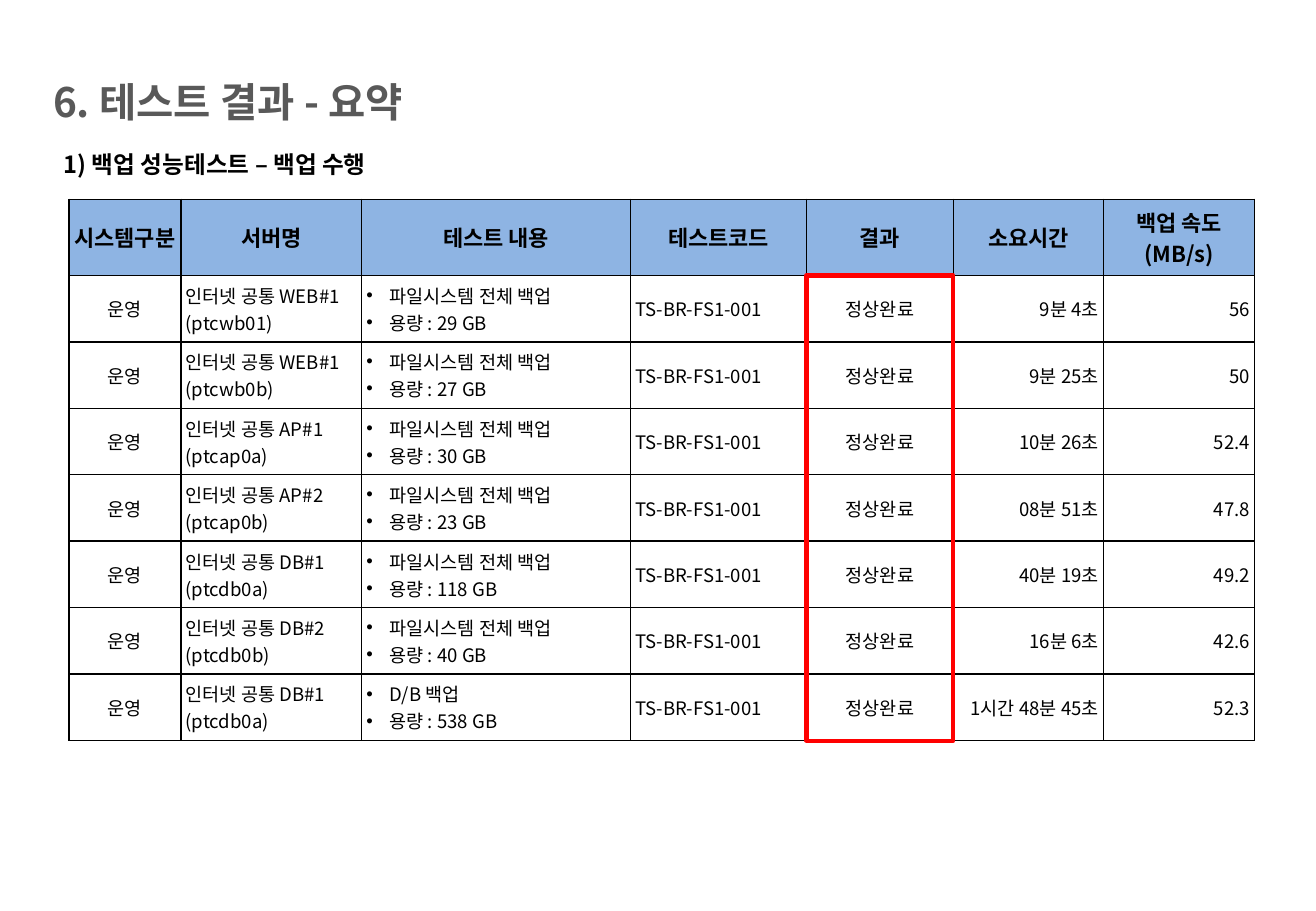
"""Build the backup performance test summary slide."""
from dataclasses import dataclass

from lxml.etree import SubElement
from pptx import Presentation
from pptx.dml.color import RGBColor
from pptx.enum.shapes import MSO_SHAPE
from pptx.enum.text import MSO_ANCHOR, PP_ALIGN
from pptx.oxml.ns import qn
from pptx.util import Cm, Pt

FONT = "Noto Sans CJK KR"
COLORS = {
    "title": "595959",
    "text": "000000",
    "header": "8EB4E3",
    "body": "FFFFFF",
    "border": "000000",
    "highlight": "FF0000",
}
TABLE_LEFT, TABLE_TOP = 1.44, 4.17
HEADER_HEIGHT, ROW_HEIGHT = 1.59, 1.39
CONTENT_COLUMN, RESULT_COLUMN = 2, 4


@dataclass
class Column:
    heading: str
    width: float
    align: PP_ALIGN


@dataclass
class BackupTest:
    server: str
    host: str
    volume: int
    duration: str
    speed: str
    work: str = "파일시스템 전체 백업"

    def values(self) -> list[str]:
        return [
            "운영",
            f"인터넷 공통 {self.server}\n({self.host})",
            f"{self.work}\n용량 : {self.volume} GB",
            "TS-BR-FS1-001",
            "정상완료",
            self.duration,
            self.speed,
        ]


@dataclass
class Heading:
    text: str
    left: float
    top: float
    width: float
    height: float
    size: float
    color: str
    spacing: float


COLUMNS = [
    Column("시스템구분", 2.34, PP_ALIGN.CENTER),
    Column("서버명", 3.78, PP_ALIGN.LEFT),
    Column("테스트 내용", 5.62, PP_ALIGN.LEFT),
    Column("테스트코드", 3.68, PP_ALIGN.LEFT),
    Column("결과", 3.07, PP_ALIGN.CENTER),
    Column("소요시간", 3.14, PP_ALIGN.RIGHT),
    Column("백업 속도\n(MB/s)", 3.16, PP_ALIGN.RIGHT),
]
TESTS = [
    BackupTest("WEB#1", "ptcwb01", 29, "9분 4초", "56"),
    BackupTest("WEB#1", "ptcwb0b", 27, "9분 25초", "50"),
    BackupTest("AP#1", "ptcap0a", 30, "10분 26초", "52.4"),
    BackupTest("AP#2", "ptcap0b", 23, "08분 51초", "47.8"),
    BackupTest("DB#1", "ptcdb0a", 118, "40분 19초", "49.2"),
    BackupTest("DB#2", "ptcdb0b", 40, "16분 6초", "42.6"),
    BackupTest("DB#1", "ptcdb0a", 538, "1시간 48분 45초", "52.3", "D/B 백업"),
]
HEADINGS = [
    Heading("6. 테스트 결과 - 요약", 0.86, 1.5, 20.47, 1.24, 24, "title", 1),
    Heading("1) 백업 성능테스트 – 백업 수행", 1.08, 2.77, 25, 1.04, 14, "text", 1.5),
]


def color(name: str) -> RGBColor:
    return RGBColor.from_string(COLORS[name])


def format_text(frame, size: float, bold: bool, color_name: str, align: PP_ALIGN) -> None:
    for paragraph in frame.paragraphs:
        paragraph.alignment = align
        for span in paragraph.runs:
            span.font.name = FONT
            span.font.size = Pt(size)
            span.font.bold = bold
            span.font.color.rgb = color(color_name)
            SubElement(span.font._element, qn("a:ea"), typeface=FONT)


def add_bullets(frame) -> None:
    for paragraph in frame.paragraphs:
        properties = paragraph._p.get_or_add_pPr()
        properties.set("marL", str(Cm(0.48)))
        properties.set("indent", str(-Cm(0.48)))
        SubElement(properties, qn("a:buFont"), typeface="Arial")
        SubElement(properties, qn("a:buChar"), char="•")


def add_borders(cell) -> None:
    properties = cell._tc.get_or_add_tcPr()
    for index, side in enumerate(("lnL", "lnR", "lnT", "lnB")):
        line = properties.makeelement(qn(f"a:{side}"), {"w": str(Pt(1))})
        fill = SubElement(line, qn("a:solidFill"))
        SubElement(fill, qn("a:srgbClr"), val=COLORS["border"])
        properties.insert(index, line)


def add_heading(page, heading: Heading) -> None:
    box = page.shapes.add_textbox(
        Cm(heading.left), Cm(heading.top), Cm(heading.width), Cm(heading.height)
    )
    frame = box.text_frame
    frame.word_wrap = True
    frame.vertical_anchor = MSO_ANCHOR.MIDDLE
    frame.margin_top = frame.margin_bottom = 0
    frame.text = heading.text
    frame.paragraphs[0].line_spacing = heading.spacing
    format_text(frame, heading.size, True, heading.color, PP_ALIGN.LEFT)


def fill_cell(cell, text: str, column: int, is_header: bool) -> None:
    cell.margin_left = cell.margin_right = Cm(0.1)
    cell.margin_top = cell.margin_bottom = Cm(0.1)
    cell.vertical_anchor = MSO_ANCHOR.MIDDLE
    cell.fill.solid()
    cell.fill.fore_color.rgb = color("header" if is_header else "body")
    add_borders(cell)
    cell.text_frame.text = text
    if column == CONTENT_COLUMN and not is_header:
        add_bullets(cell.text_frame)
    align = PP_ALIGN.CENTER if is_header else COLUMNS[column].align
    format_text(cell.text_frame, 13 if is_header else 11, is_header, "text", align)


def add_results_table(page) -> None:
    rows = [[column.heading for column in COLUMNS]] + [test.values() for test in TESTS]
    width = sum(column.width for column in COLUMNS)
    height = HEADER_HEIGHT + ROW_HEIGHT * len(TESTS)
    table = page.shapes.add_table(
        len(rows), len(COLUMNS), Cm(TABLE_LEFT), Cm(TABLE_TOP), Cm(width), Cm(height)
    ).table
    table.first_row = table.horz_banding = False
    for index, column in enumerate(COLUMNS):
        table.columns[index].width = Cm(column.width)
    for row, values in enumerate(rows):
        table.rows[row].height = Cm(ROW_HEIGHT if row else HEADER_HEIGHT)
        for column, text in enumerate(values):
            fill_cell(table.cell(row, column), text, column, row == 0)


def add_result_highlight(page) -> None:
    left = TABLE_LEFT + sum(column.width for column in COLUMNS[:RESULT_COLUMN])
    box = page.shapes.add_shape(
        MSO_SHAPE.RECTANGLE,
        Cm(left),
        Cm(TABLE_TOP + HEADER_HEIGHT),
        Cm(COLUMNS[RESULT_COLUMN].width),
        Cm(ROW_HEIGHT * len(TESTS)),
    )
    box.shadow.inherit = False
    box.fill.background()
    box.line.color.rgb = color("highlight")
    box.line.width = Pt(2.5)


def main() -> None:
    deck = Presentation()
    deck.slide_width, deck.slide_height = Cm(27.51), Cm(19.05)
    page = deck.slides.add_slide(deck.slide_layouts[6])
    for heading in HEADINGS:
        add_heading(page, heading)
    add_results_table(page)
    add_result_highlight(page)
    deck.save("out.pptx")


if __name__ == "__main__":
    main()
